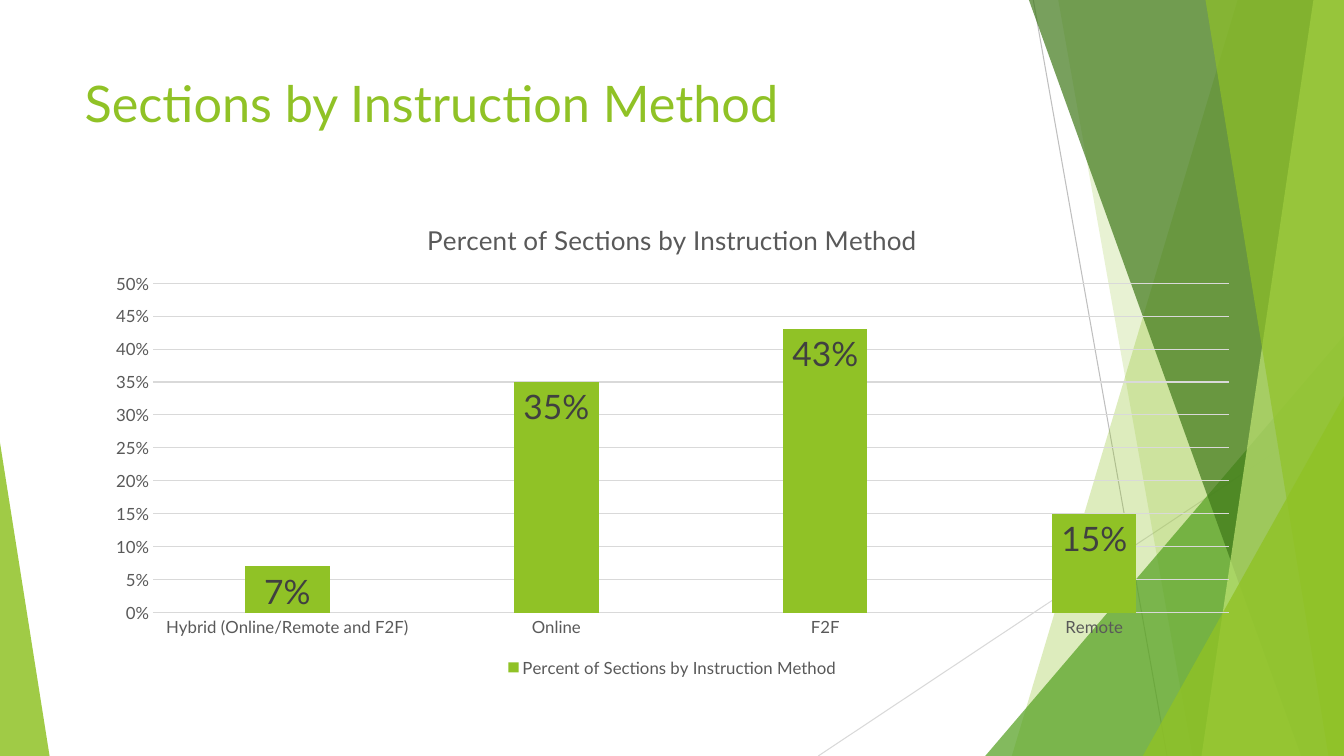
"""Build a slide with a column chart of course sections by instruction method."""
import pptx
import pptx.chart.data
import pptx.dml.color
import pptx.enum.chart
import pptx.enum.shapes
import pptx.enum.text
import pptx.oxml.ns
import pptx.util
from lxml import etree

Cm = pptx.util.Cm
Pt = pptx.util.Pt
qn = pptx.oxml.ns.qn
WIDTH, HEIGHT = 33.87, 19.05
GREEN, GRID, GREY = "90C226", "D9D9D9", "595959"


def paint(fill, color, opacity=100):
    fill.solid()
    fill.fore_color.rgb = pptx.dml.color.RGBColor.from_string(color)
    if opacity < 100:
        tint = fill._xPr.find(".//" + qn("a:srgbClr"))
        etree.SubElement(tint, qn("a:alpha"), val=str(opacity * 1000))


def style_font(font, size, color):
    for name, value in {"name": "Lato", "size": Pt(size), "bold": False}.items():
        setattr(font, name, value)
    paint(font.fill, color)


deck = pptx.Presentation()
deck.slide_width, deck.slide_height = Cm(WIDTH), Cm(HEIGHT)
page = deck.slides.add_slide(deck.slide_layouts[5])

for x1, y1, x2, y2, color in [
    (26.04, 0, 29.41, HEIGHT, "BFBFBF"),
    (WIDTH, 10.24, 20.62, HEIGHT, GRID),
]:
    ray = page.shapes.add_connector(
        pptx.enum.shapes.MSO_CONNECTOR.STRAIGHT, Cm(x1), Cm(y1), Cm(x2), Cm(y2))
    ray.line.width = Pt(0.75)
    paint(ray.line.fill, color)
    etree.SubElement(ray._element.spPr, qn("a:effectLst"))

bands = [
    ("band", (31.19, 25.5), GREEN, 30),
    ("band", (26.67, 30.05), GREEN, 20),
    ("triangle", (24.83, 8.46, 9.04, 10.59, 1), "54A021", 72),
    ("band", (25.93, 32.79), "3F7819", 70),
    ("band", (33.1, 30.28), "C0E474", 70),
    ("band", (30.38, 33.48), GREEN, 65),
    ("triangle", (28.8, 9.98, 5.07, 9.07, 1), GREEN, 80),
    ("triangle", (0, 11.15, 1.25, 7.9, 0), GREEN, 85),
]
for kind, numbers, color, opacity in bands:
    if kind == "band":
        top, bottom = numbers
        outline = page.shapes.build_freeform(Cm(top), 0)
        outline.add_line_segments([
            (Cm(WIDTH), 0), (Cm(WIDTH), Cm(HEIGHT)), (Cm(bottom), Cm(HEIGHT))])
        facet = outline.convert_to_shape()
    else:
        *place, apex = numbers
        facet = page.shapes.add_shape(
            pptx.enum.shapes.MSO_SHAPE.ISOSCELES_TRIANGLE, *map(Cm, place))
        facet.adjustments[0] = apex
    facet.shadow.inherit = False
    facet.line.fill.background()
    paint(facet.fill, color, opacity)

title = page.shapes.title
title_place = {"left": 1.88, "top": 1.7, "width": 23.88, "height": 3.66}
for name, value in title_place.items():
    setattr(title, name, Cm(value))
title.text_frame.text = "Sections by Instruction Method"
title.text_frame.vertical_anchor = pptx.enum.text.MSO_ANCHOR.TOP
para = title.text_frame.paragraphs[0]
para.alignment = pptx.enum.text.PP_ALIGN.LEFT
style_font(para.runs[0].font, 36, GREEN)

caption = "Percent of Sections by Instruction Method"
data = pptx.chart.data.CategoryChartData(number_format="0%")
data.categories = ["Hybrid (Online/Remote and F2F)", "Online", "F2F", "Remote"]
data.add_series(caption, [0.07, 0.35, 0.43, 0.15])
chart = page.shapes.add_chart(
    pptx.enum.chart.XL_CHART_TYPE.COLUMN_CLUSTERED,
    Cm(2.34), Cm(5.08), Cm(29.21), Cm(12.09), data).chart
style_font(chart.font, 12, GREY)

chart.has_title = True
chart.chart_title.include_in_layout = False
chart.chart_title.text_frame.text = caption
style_font(chart.chart_title.text_frame.paragraphs[0].runs[0].font, 18.6, GREY)

chart.has_legend = True
chart.legend.position = pptx.enum.chart.XL_LEGEND_POSITION.BOTTOM
chart.legend.include_in_layout = False
style_font(chart.legend.font, 12, GREY)

for axis in (chart.category_axis, chart.value_axis):
    axis.major_tick_mark = pptx.enum.chart.XL_TICK_MARK.NONE
    style_font(axis.tick_labels.font, 12, GREY)
for line in (chart.category_axis.format.line, chart.value_axis.major_gridlines.format.line):
    line.width = Pt(0.75)
    paint(line.fill, GRID)
chart.value_axis.format.line.fill.background()
scale = {"minimum_scale": 0, "maximum_scale": 0.5, "major_unit": 0.05}
for name, value in scale.items():
    setattr(chart.value_axis, name, value)

plot = chart.plots[0]
for name, value in {"gap_width": 219, "overlap": -27, "vary_by_categories": False}.items():
    setattr(plot, name, value)
series = plot.series[0]
paint(series.format.fill, GREEN)
labels = series.data_labels
label_format = {
    "show_value": True,
    "number_format": "0%",
    "number_format_is_linked": False,
    "position": pptx.enum.chart.XL_LABEL_POSITION.INSIDE_END,
}
for name, value in label_format.items():
    setattr(labels, name, value)
style_font(labels.font, 24, "404040")

deck.save("out.pptx")
